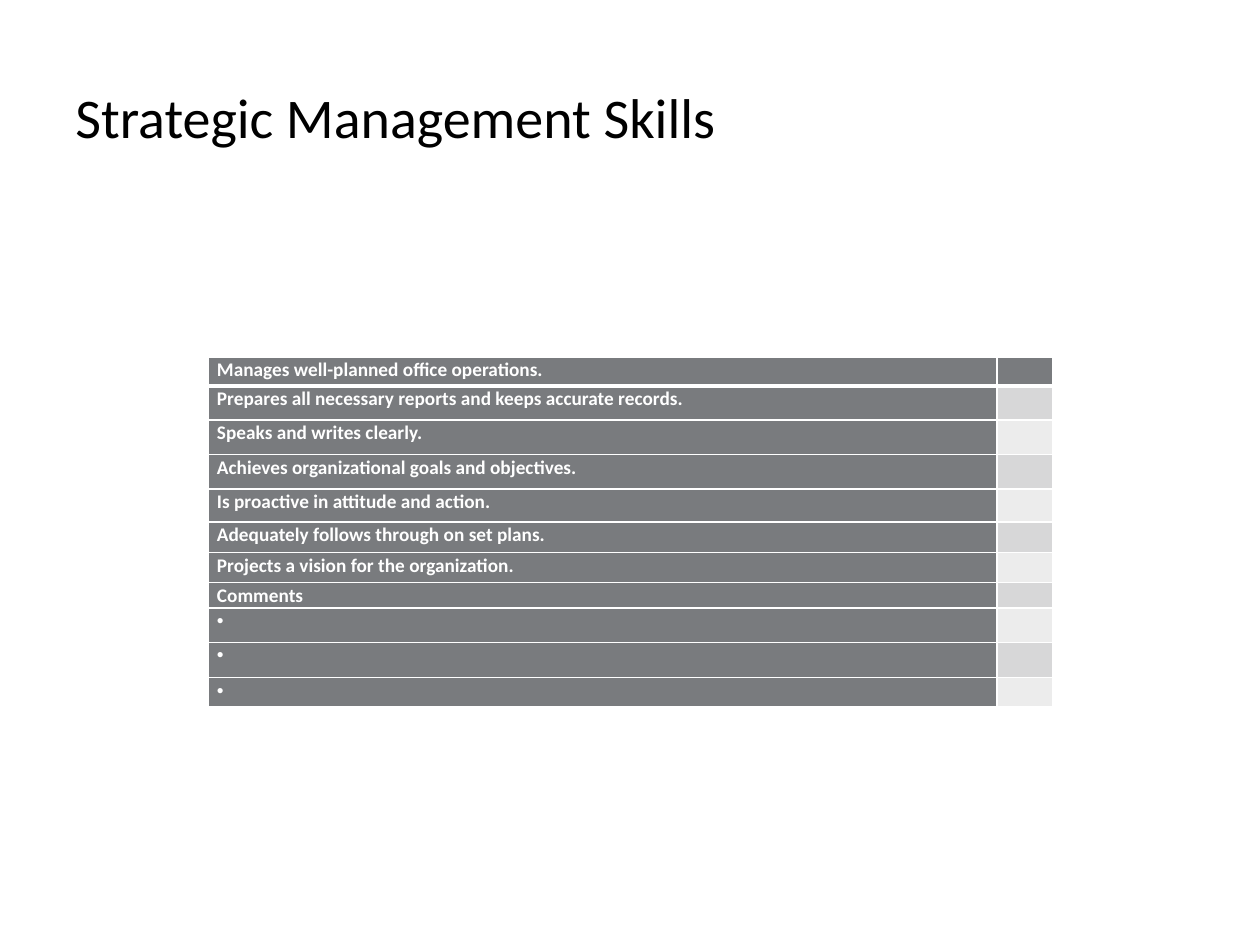
import pptx
import pptx.util
import pptx.dml.color
import pptx.enum.text
import pptx.oxml.ns
from lxml import etree

Pt = pptx.util.Pt
TITLE = "Strategic Management Skills"
SKILLS = [
    ("Manages well-planned office operations.", 16.6),
    ("Prepares all necessary reports and keeps accurate records.", 19.4),
    ("Speaks and writes clearly.", 19.8),
    ("Achieves organizational goals and objectives.", 19.6),
    ("Is proactive in attitude and action.", 18.8),
    ("Adequately follows through on set plans.", 17.6),
    ("Projects a vision for the organization.", 17.2),
    ("Comments", 14.4),
]
COMMENT_HEIGHTS = [19.8, 20.2, 16.6]
COLUMN_WIDTHS = [450.7, 31.7]
DARK, BANDS, WHITE = "797B7E", ("ECECEC", "D7D7D8"), "FFFFFF"


def color(value):
    return pptx.dml.color.RGBColor.from_string(value)


def set_font(para, size, value, bold=False):
    para.font.name = "Calibri"
    para.font.size = Pt(size)
    para.font.bold = bold
    para.font.color.rgb = color(value)


def add_bullet(para):
    props = para._p.get_or_add_pPr()
    props.set("marL", "0")
    props.set("indent", "0")
    bullet_font = etree.Element(pptx.oxml.ns.qn("a:buFont"), typeface="Arial")
    bullet = etree.Element(pptx.oxml.ns.qn("a:buChar"), char="•")
    default_run = props.find(pptx.oxml.ns.qn("a:defRPr"))
    default_run.addprevious(bullet_font)
    default_run.addprevious(bullet)


def set_borders(cell, widths):
    props = cell._tc.get_or_add_tcPr()
    for index, (side, width) in enumerate(widths.items()):
        line = etree.Element(pptx.oxml.ns.qn(f"a:ln{side}"), w=str(Pt(width)))
        fill = etree.SubElement(line, pptx.oxml.ns.qn("a:solidFill"))
        etree.SubElement(fill, pptx.oxml.ns.qn("a:srgbClr"), val=WHITE)
        props.insert(index, line)


def style_cell(cell, row, fill):
    cell.margin_left = cell.margin_right = Pt(5)
    cell.margin_top = cell.margin_bottom = 0
    cell.fill.solid()
    cell.fill.fore_color.rgb = color(fill)
    para = cell.text_frame.paragraphs[0]
    para.line_spacing = 1.05
    set_font(para, 11, WHITE, True)
    set_borders(cell, {
        "L": 1, "R": 1,
        "T": 3 if row == 1 else 1,
        "B": 3 if row == 0 else 1,
    })
    return para


def add_title(page):
    box = page.shapes.add_textbox(Pt(36), Pt(21.6), Pt(648), Pt(90))
    frame = box.text_frame
    frame.word_wrap = True
    frame.vertical_anchor = pptx.enum.text.MSO_ANCHOR.MIDDLE
    frame.text = TITLE
    set_font(frame.paragraphs[0], 32, "000000")


def add_skills_table(page):
    rows = SKILLS + [(" ", height) for height in COMMENT_HEIGHTS]
    table = page.shapes.add_table(
        len(rows), len(COLUMN_WIDTHS), Pt(119), Pt(204),
        Pt(sum(COLUMN_WIDTHS)), Pt(sum(height for _, height in rows)),
    ).table
    for column, width in zip(table.columns, COLUMN_WIDTHS):
        column.width = Pt(width)
    for row, (text, height) in enumerate(rows):
        table.rows[row].height = Pt(height)
        skill, rating = table.cell(row, 0), table.cell(row, 1)
        skill.text = text
        para = style_cell(skill, row, DARK)
        if row >= len(SKILLS):
            add_bullet(para)
        style_cell(rating, row, BANDS[row % 2] if row else DARK)


def main():
    deck = pptx.Presentation()
    deck.slide_width, deck.slide_height = Pt(720), Pt(540)
    page = deck.slides.add_slide(deck.slide_layouts[6])
    add_title(page)
    add_skills_table(page)
    deck.save("out.pptx")


if __name__ == "__main__":
    main()
